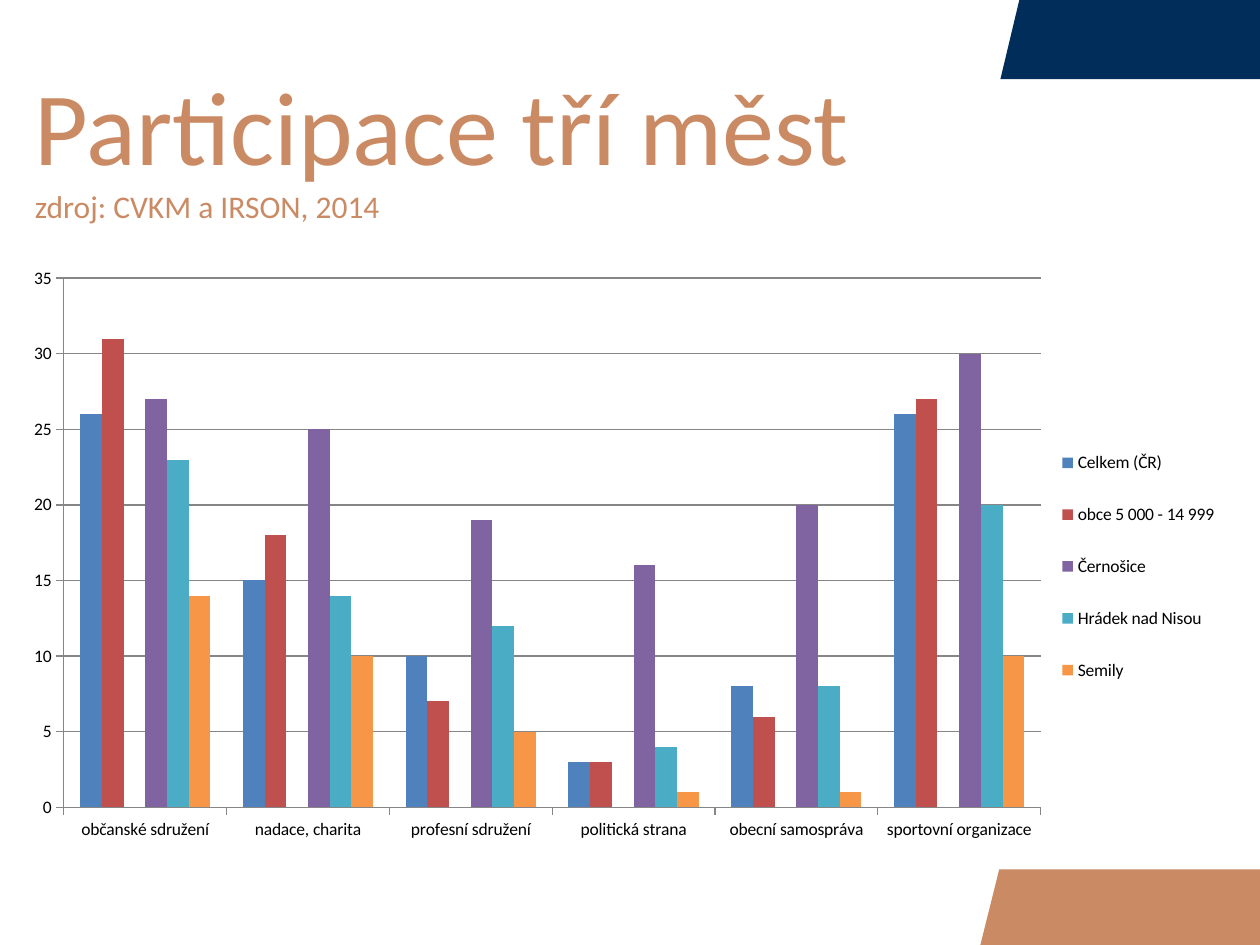
from lxml import etree
from pptx import Presentation
from pptx import util as u
from pptx.chart.data import CategoryChartData
from pptx.dml.color import RGBColor
from pptx.enum import chart as charts, text
from pptx.oxml import parse_xml

CHART_NS = "http://schemas.openxmlformats.org/drawingml/2006/chart"
NAVY, COPPER, BLACK, GREY = "002D5A", "CA8A64", "000000", "868686"

TOPICS = ["občanské sdružení", "nadace, charita", "profesní sdružení",
          "politická strana", "obecní samospráva", "sportovní organizace"]
PLACES = [
    ("Celkem (ČR)", "4F81BD", [26, 15, 10, 3, 8, 26]),
    ("obce 5 000 - 14 999", "C0504D", [31, 18, 7, 3, 6, 27]),
    ("Series 3", "9BBB59", [None] * len(TOPICS)),
    ("Černošice", "8064A2", [27, 25, 19, 16, 20, 30]),
    ("Hrádek nad Nisou", "4BACC6", [23, 14, 12, 4, 8, 20]),
    ("Semily", "F79646", [14, 10, 5, 1, 1, 10]),
]
UNNAMED_GROUP = 2


def rgb(value):
    return RGBColor.from_string(value)


def manual_layout(x, y, w, h, inner=False):
    target = '<c:layoutTarget val="inner"/>' if inner else ""
    return parse_xml(
        f'<c:layout xmlns:c="{CHART_NS}"><c:manualLayout>{target}'
        '<c:xMode val="edge"/><c:yMode val="edge"/>'
        f'<c:x val="{x}"/><c:y val="{y}"/><c:w val="{w}"/><c:h val="{h}"/>'
        '</c:manualLayout></c:layout>')


class SlideWriter:
    def __init__(self, slide, font="Calibri"):
        self.slide = slide
        self.font = font

    def band(self, corners, color):
        builder = self.slide.shapes.build_freeform(
            *(u.Pt(v) for v in corners[0]), scale=1.0)
        builder.add_line_segments([(u.Pt(x), u.Pt(y)) for x, y in corners[1:]])
        band = builder.convert_to_shape()
        band.shadow.inherit = False
        band.fill.solid()
        band.fill.fore_color.rgb = rgb(color)
        band.line.fill.background()

    def heading(self, box, lines, color):
        frame = self.slide.shapes.add_textbox(*map(u.Pt, box)).text_frame
        frame.word_wrap = True
        frame.vertical_anchor = text.MSO_ANCHOR.MIDDLE
        frame.margin_left = frame.margin_right = u.Pt(20)
        frame.margin_top = frame.margin_bottom = u.Pt(3.6)
        paragraph = frame.paragraphs[0]
        paragraph.font.name = self.font
        paragraph.font.color.rgb = rgb(color)
        for index, (words, size) in enumerate(lines):
            if index:
                paragraph.add_line_break()
            run = paragraph.add_run()
            run.text = words
            run.font.size = u.Pt(size)

    def columns(self, box, categories, groups, hidden_entry):
        data = CategoryChartData(number_format="0")
        data.categories = categories
        for name, _, values in groups:
            data.add_series(name, values)
        chart = self.slide.shapes.add_chart(
            charts.XL_CHART_TYPE.COLUMN_CLUSTERED, *map(u.Pt, box), data).chart
        chart.has_title = False
        chart.font.name = self.font
        chart.font.size = u.Pt(10)
        chart.font.color.rgb = rgb(BLACK)

        plot = chart.plots[0]
        plot.gap_width = 150
        plot.overlap = 0
        plot.vary_by_categories = False
        for series, (_, color, _) in zip(plot.series, groups):
            series.invert_if_negative = False
            series.format.fill.solid()
            series.format.fill.fore_color.rgb = rgb(color)

        values = chart.value_axis
        values.minimum_scale, values.maximum_scale, values.major_unit = 0, 35, 5
        values.has_major_gridlines = True
        values.tick_labels.number_format = "0"
        values.tick_labels.number_format_is_linked = False
        for axis in (values, chart.category_axis):
            axis.major_tick_mark = charts.XL_TICK_MARK.OUTSIDE
            axis.minor_tick_mark = charts.XL_TICK_MARK.NONE
        for part in (values, values.major_gridlines, chart.category_axis):
            part.format.line.color.rgb = rgb(GREY)
            part.format.line.width = u.Pt(0.75)

        self.legend(chart, hidden_entry)
        area = chart.element.find(f".//{{{CHART_NS}}}plotArea")
        for layout in area.findall(f"{{{CHART_NS}}}layout"):
            area.remove(layout)
        area.insert(0, manual_layout(0.04, 0.04, 0.8, 0.89, inner=True))

    def legend(self, chart, hidden_entry):
        chart.has_legend = True
        chart.legend.position = charts.XL_LEGEND_POSITION.RIGHT
        chart.legend.include_in_layout = False
        legend = chart.element.find(f".//{{{CHART_NS}}}legend")
        for layout in legend.findall(f"{{{CHART_NS}}}layout"):
            legend.remove(layout)
        entry = etree.Element(f"{{{CHART_NS}}}legendEntry")
        etree.SubElement(entry, f"{{{CHART_NS}}}idx", val=str(hidden_entry))
        etree.SubElement(entry, f"{{{CHART_NS}}}delete", val="1")
        legend.insert(1, entry)
        legend.insert(2, manual_layout(0.85, 0.28, 0.14, 0.49))


def main():
    deck = Presentation()
    deck.slide_width, deck.slide_height = u.Pt(720), u.Pt(540)
    writer = SlideWriter(deck.slides.add_slide(deck.slide_layouts[6]))
    writer.band([(571.7, 45.2), (582.5, 0), (720, 0), (720, 45.2)], NAVY)
    writer.band([(560.2, 540), (571, 496.8), (720, 496.8), (720, 540)], COPPER)
    writer.heading((0, 45.4, 720, 72.7),
                   [("Participace tří měst", 59.4),
                    ("zdroj: CVKM a IRSON, 2014", 18)], COPPER)
    writer.columns((8.6, 145.4, 697.7, 339.8), TOPICS, PLACES, UNNAMED_GROUP)
    deck.save("out.pptx")


if __name__ == "__main__":
    main()
